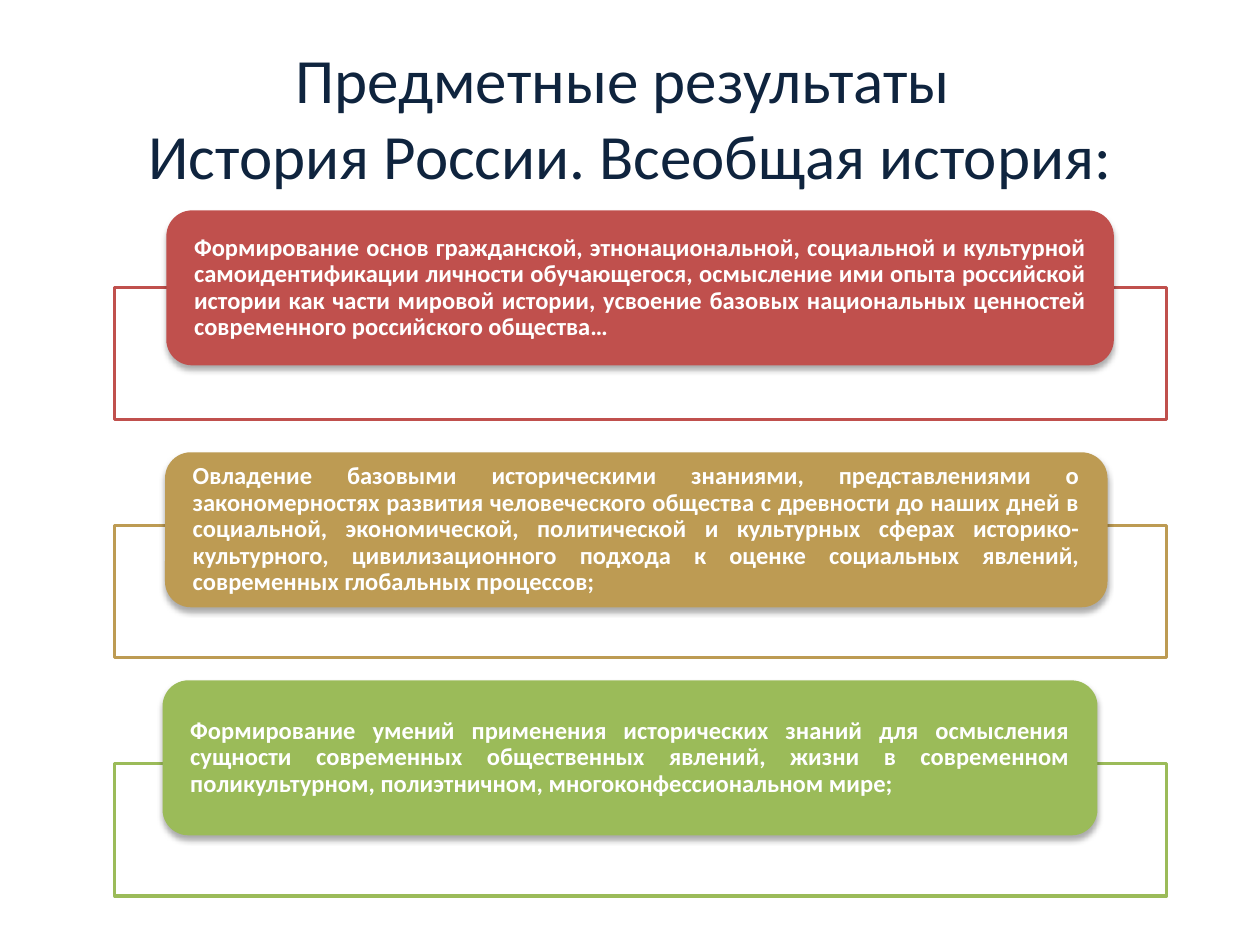
from lxml.etree import SubElement
from pptx import Presentation
from pptx.dml.color import RGBColor
from pptx.enum.shapes import MSO_SHAPE
from pptx.enum.text import MSO_ANCHOR, PP_ALIGN
from pptx.oxml.ns import qn
from pptx.util import Inches, Pt

NAVY = RGBColor(0x0F, 0x24, 0x3E)
WHITE = RGBColor(0xFF, 0xFF, 0xFF)
RED = RGBColor(0xC0, 0x50, 0x4D)
GOLD = RGBColor(0xBD, 0x9B, 0x53)
GREEN = RGBColor(0x9B, 0xBB, 0x59)

TITLE = "Предметные результаты \vИстория России. Всеобщая история:"

# colour, left, top and width of the bar, text
GOALS = [
    (RED, 1.32, 1.67, 7.52,
     "Формирование основ гражданской, этнонациональной, социальной и "
     "культурной самоидентификации личности обучающегося, осмысление ими "
     "опыта российской истории как части мировой истории, усвоение базовых "
     "национальных ценностей современного российского общества…"),
    (GOLD, 1.31, 3.59, 7.48,
     "Овладение базовыми историческими знаниями, представлениями о "
     "закономерностях развития человеческого общества с древности до наших "
     "дней в социальной, экономической, политической и культурных сферах "
     "историко-культурного, цивилизационного подхода к оценке социальных "
     "явлений, современных глобальных процессов;"),
    (GREEN, 1.29, 5.4, 7.42,
     "Формирование умений применения исторических знаний для осмысления "
     "сущности современных общественных явлений, жизни в современном "
     "поликультурном, полиэтничном, многоконфессиональном мире;"),
]
FRAME_TOP, FRAME_STEP = 2.28, 1.89


def set_font(para, size, color, bold=False):
    for run in para.runs:
        font = run.font
        font.name, font.size, font.bold = "Calibri", Pt(size), bold
        font.color.rgb = color


def add_title(slide):
    title = slide.shapes.title
    title.left, title.top = Inches(0.5), Inches(0.3)
    title.width, title.height = Inches(9), Inches(1.25)
    frame = title.text_frame
    frame.text = TITLE
    frame.vertical_anchor = MSO_ANCHOR.MIDDLE
    para = frame.paragraphs[0]
    para.alignment = PP_ALIGN.CENTER
    set_font(para, 36, NAVY)


def add_box(slide, kind, left, top, width, height, fill):
    box = slide.shapes.add_shape(
        kind, Inches(left), Inches(top), Inches(width), Inches(height))
    box.fill.solid()
    box.fill.fore_color.rgb = fill
    box.shadow.inherit = False
    return box


def add_frame(slide, top, color):
    box = add_box(slide, MSO_SHAPE.RECTANGLE, 0.91, top, 8.35, 1.05, WHITE)
    box.line.color.rgb = color
    box.line.width = Pt(2)
    tint = box.fill._xPr.find(".//" + qn("a:srgbClr"))
    SubElement(tint, qn("a:alpha"), val="90000")


def add_shadow(box):
    effects = box._element.spPr.find(qn("a:effectLst"))
    shadow = SubElement(effects, qn("a:outerShdw"), blurRad=str(Pt(3.5)),
                        dist=str(Pt(2.2)), dir="5400000", rotWithShape="0")
    color = SubElement(shadow, qn("a:srgbClr"), val="000000")
    SubElement(color, qn("a:alpha"), val="32000")


def add_bar(slide, left, top, width, color, text):
    bar = add_box(slide, MSO_SHAPE.ROUNDED_RECTANGLE,
                  left, top, width, 1.23, color)
    bar.line.fill.background()
    add_shadow(bar)
    frame = bar.text_frame
    frame.text = text
    frame.word_wrap = True
    frame.vertical_anchor = MSO_ANCHOR.MIDDLE
    # The rounded corners add 0.06 inches to each side margin.
    frame.margin_left = frame.margin_right = Inches(0.16)
    frame.margin_top = frame.margin_bottom = 0
    para = frame.paragraphs[0]
    para.alignment = PP_ALIGN.JUSTIFY
    para.line_spacing = 0.9
    set_font(para, 14, WHITE, bold=True)


def main():
    deck = Presentation()
    deck.slide_width, deck.slide_height = Inches(10), Inches(7.5)
    slide = deck.slides.add_slide(deck.slide_layouts[5])
    add_title(slide)
    for row, (color, left, top, width, text) in enumerate(GOALS):
        add_frame(slide, FRAME_TOP + row * FRAME_STEP, color)
        add_bar(slide, left, top, width, color, text)
    deck.save("out.pptx")


if __name__ == "__main__":
    main()
